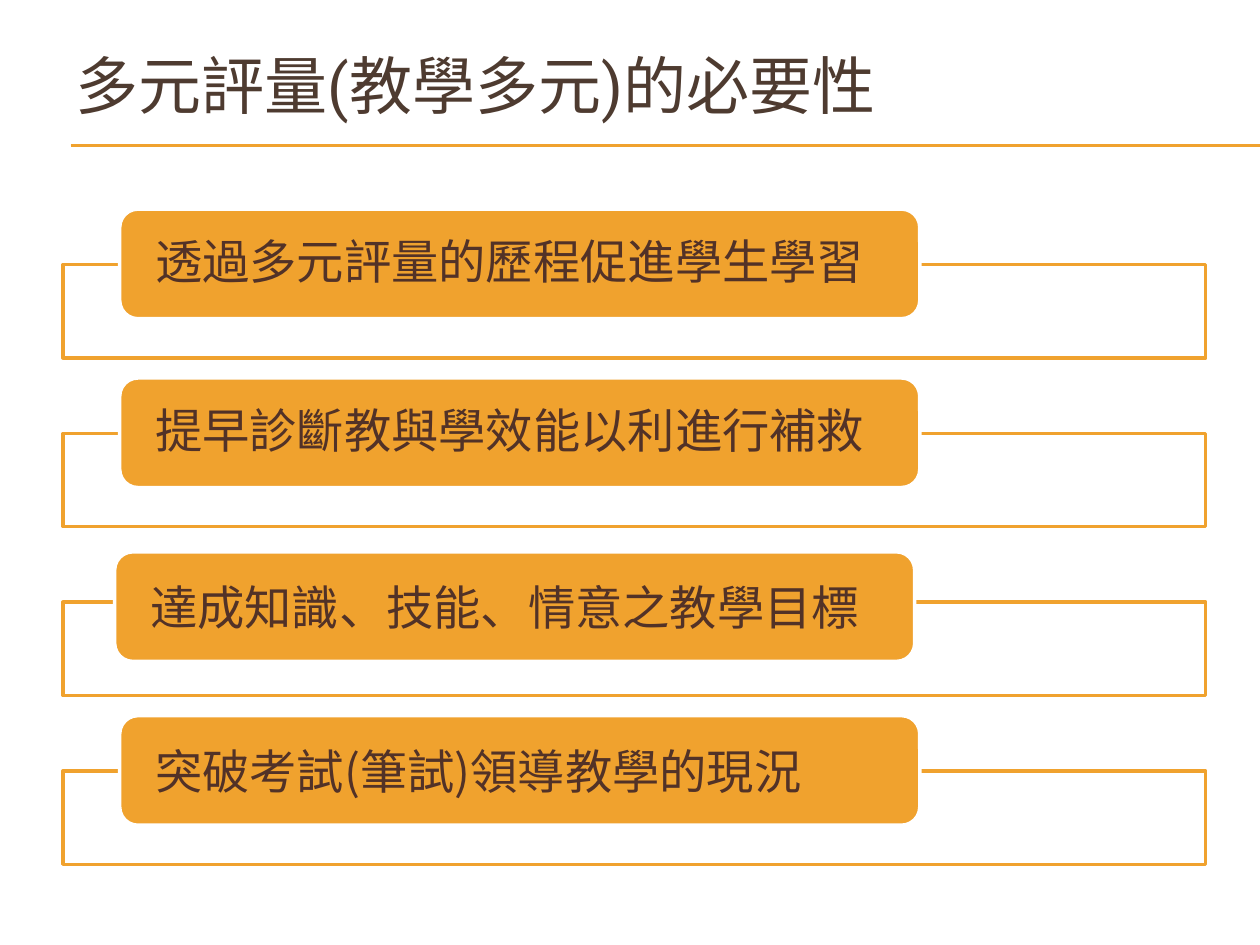
from lxml import etree
from pptx import Presentation
from pptx.dml.color import RGBColor
from pptx.enum.shapes import MSO_CONNECTOR, MSO_SHAPE as Shape
from pptx.enum.text import MSO_ANCHOR as Anchor, PP_ALIGN as Align
from pptx.oxml.ns import qn
from pptx.util import Inches, Pt

TITLE = "多元評量(教學多元)的必要性"
# text, left, top offset from its frame, line spacing, space after
ROWS = [
    ("透過多元評量的歷程促進學生學習", 0.95, -0.44, 0.9, 9.45),
    ("提早診斷教與學效能以利進行補救", 0.95, -0.44, 0.9, 9.45),
    ("達成知識、技能、情意之教學目標", 0.91, -0.4, 1.0, 0),
    ("突破考試(筆試)領導教學的現況", 0.95, -0.44, 1.0, 0),
]
TOP, STEP = 2.1, 1.34
RULES = [1.15, 1.16]
COLORS = {"gold": "F0A22E", "white": "FFFFFF", "title": "4E3B30", "text": "523227"}
LATIN, CJK = "Roboto", "Noto Sans CJK SC"


def color(name):
    return RGBColor.from_string(COLORS[name])


def write(frame, text, size, ink, latin):
    """Put one left-aligned, vertically centred paragraph in the frame."""
    frame.word_wrap = True
    frame.vertical_anchor = Anchor.MIDDLE
    para = frame.paragraphs[0]
    para.text = text
    para.alignment = Align.LEFT
    for font in (para.font, para.runs[0].font):
        font.size = Pt(size)
        font.color.rgb = color(ink)
        font.name = latin
        east = etree.SubElement(font._element, qn("a:ea"))
        east.set("typeface", CJK)
    return para


def add_box(slide, kind, left, top, width, height, fill, line):
    box = slide.shapes.add_shape(
        kind, Inches(left), Inches(top), Inches(width), Inches(height))
    box.shadow.inherit = False
    box.fill.solid()
    box.fill.fore_color.rgb = color(fill)
    box.line.color.rgb = color(line)
    box.line.width = Pt(2)
    return box


def add_rule(slide, y):
    rule = slide.shapes.add_connector(
        MSO_CONNECTOR.STRAIGHT, Inches(0.56), Inches(y), Inches(10), Inches(y))
    rule.line.color.rgb = color("gold")
    rule.line.width = Pt(0.75)
    etree.SubElement(rule._element.spPr, qn("a:effectLst"))


def add_row(slide, y, text, left, shift, spacing, after):
    frame = add_box(slide, Shape.RECTANGLE, 0.5, y, 9.07, 0.74, "white", "gold")
    tint = frame._element.spPr.find(qn("a:solidFill"))[0]
    etree.SubElement(tint, qn("a:alpha")).set("val", "90000")

    label = add_box(slide, Shape.ROUNDED_RECTANGLE,
                    left, y + shift, 6.35, 0.87, "gold", "white")
    body = label.text_frame
    body.margin_left = body.margin_right = Inches(0.24)
    body.margin_top = body.margin_bottom = 0
    para = write(body, text, 27, "text", CJK)
    para.line_spacing = spacing
    para.space_after = Pt(after)


def main():
    deck = Presentation()
    deck.slide_width, deck.slide_height = Inches(10), Inches(7.5)
    slide = deck.slides.add_slide(deck.slide_layouts[5])
    for y in RULES:
        add_rule(slide, y)
    title = slide.shapes.title
    title.left, title.top = Inches(0.5), Inches(0.21)
    title.width, title.height = Inches(9.5), Inches(0.92)
    write(title.text_frame, TITLE, 36, "title", LATIN)
    for i, row in enumerate(ROWS):
        add_row(slide, TOP + i * STEP, *row)
    deck.save("out.pptx")


if __name__ == "__main__":
    main()
